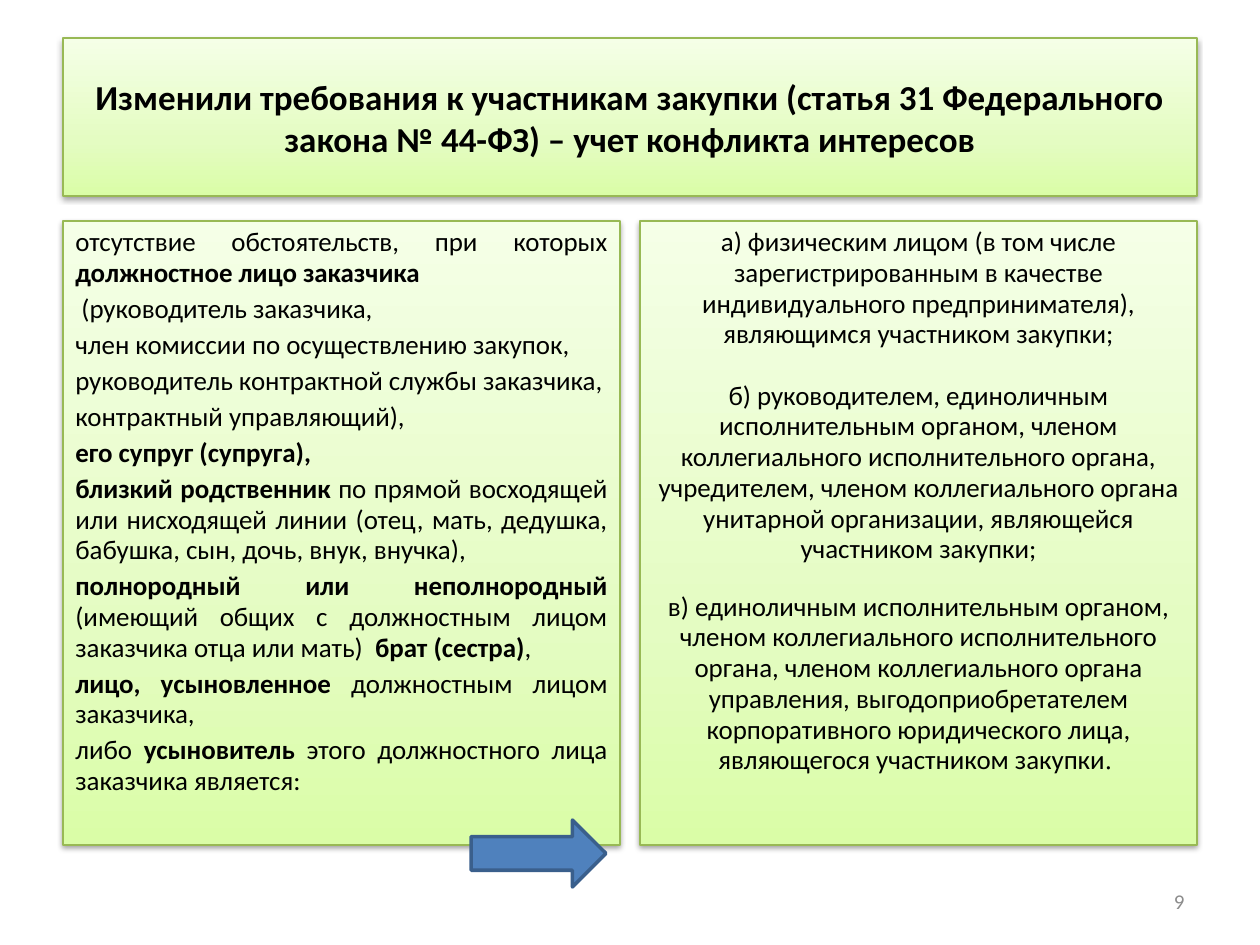
from copy import deepcopy

from lxml import etree
from pptx import Presentation
from pptx.dml.color import RGBColor
from pptx.enum.shapes import MSO_SHAPE
from pptx.enum.text import MSO_ANCHOR, PP_ALIGN
from pptx.oxml.ns import qn
from pptx.util import Emu, Pt

RECTANGLE, RIGHT_ARROW = MSO_SHAPE.RECTANGLE, MSO_SHAPE.RIGHT_ARROW
TOP, MIDDLE = MSO_ANCHOR.TOP, MSO_ANCHOR.MIDDLE
CENTER, JUSTIFY, RIGHT = PP_ALIGN.CENTER, PP_ALIGN.JUSTIFY, PP_ALIGN.RIGHT

BLACK = RGBColor(0x00, 0x00, 0x00)
GRAY = RGBColor(0x8C, 0x8C, 0x8C)
GREEN_LINE = RGBColor(0x98, 0xB9, 0x55)
BLUE = RGBColor(0x4F, 0x81, 0xBD)
DARK_BLUE = RGBColor(0x3A, 0x5F, 0x8C)
GREEN_STOPS = [
    (0, RGBColor(0xDA, 0xFD, 0xA7)),
    (0.35, RGBColor(0xE4, 0xFC, 0xC2)),
    (1, RGBColor(0xF5, 0xFF, 0xE7)),
]

EMU_PER_INCH = 914400
PX_PER_INCH = 126
MARGIN = 63
COLUMN_WIDTH = 557

HEADING = ("Изменили требования к участникам закупки (статья 31 Федерального "
           "закона № 44-ФЗ) – учет конфликта интересов")
OFFICIALS = [
    "отсутствие обстоятельств, при которых *должностное лицо заказчика*",
    " (руководитель заказчика, ",
    "член комиссии по осуществлению закупок,",
    "руководитель контрактной службы заказчика,",
    "контрактный управляющий),",
    "*его супруг (супруга), *",
    "*близкий родственник *по прямой восходящей или нисходящей линии "
    "(отец, мать, дедушка, бабушка, сын, дочь, внук, внучка), ",
    "*полнородный или неполнородный *(имеющий общих с должностным лицом "
    "заказчика отца или мать)  *брат (сестра)*, ",
    "*лицо, усыновленное *должностным лицом заказчика, ",
    "либо *усыновитель* этого должностного лица заказчика является:",
]
PARTICIPANTS = [
    ("а) физическим лицом (в том числе зарегистрированным в качестве "
     "индивидуального предпринимателя), являющимся участником закупки;", 0),
    ("б) руководителем, единоличным исполнительным органом, членом "
     "коллегиального исполнительного органа, учредителем, членом "
     "коллегиального органа унитарной организации, являющейся участником "
     "закупки;", 17.5),
    ("в) единоличным исполнительным органом, членом коллегиального "
     "исполнительного органа, членом коллегиального органа управления, "
     "выгодоприобретателем корпоративного юридического лица, являющегося "
     "участником закупки", 15.3),
]

BODY_FONT = {"name": "Calibri", "size": Pt(15.4)}
BODY_LINES = {"line_spacing": 0.95}


def px(length):
    return Emu(round(length * EMU_PER_INCH / PX_PER_INCH))


def apply_format(target, values):
    for key, value in values.items():
        setattr(target, key, value)


def add_run(paragraph, text, font, color=BLACK):
    run = paragraph.add_run()
    run.text = text
    apply_format(run.font, font)
    run.font.color.rgb = color


def add_paragraph(frame, text, layout, font, color=BLACK):
    first = frame.paragraphs[0]
    paragraph = frame.add_paragraph() if first.runs else first
    apply_format(paragraph, layout)
    for index, part in enumerate(text.split("*")):
        if part:
            add_run(paragraph, part, {"bold": index % 2 == 1, **font}, color)
    return paragraph


def add_soft_shadow(shape):
    shape.shadow.inherit = False
    effects = shape._element.spPr.find(qn("a:effectLst"))
    shadow = etree.SubElement(effects, qn("a:outerShdw"), blurRad=str(Pt(3.1)),
                              dist=str(Pt(1.6)), dir="5400000", rotWithShape="0")
    color = etree.SubElement(shadow, qn("a:srgbClr"), val="000000")
    etree.SubElement(color, qn("a:alpha"), val="38000")


def add_green_panel(slide, box, anchor):
    panel = slide.shapes.add_shape(RECTANGLE, *map(px, box))
    panel.fill.gradient()
    panel.fill.gradient_angle = 90
    stop_list = panel._element.spPr.find(qn("a:gradFill")).find(qn("a:gsLst"))
    stop_list.append(deepcopy(stop_list[0]))
    for stop, (position, color) in zip(panel.fill.gradient_stops, GREEN_STOPS):
        stop.position = position
        stop.color.rgb = color
    panel.line.color.rgb = GREEN_LINE
    panel.line.width = Pt(0.75)
    add_soft_shadow(panel)
    apply_format(panel.text_frame, {"word_wrap": True, "vertical_anchor": anchor})
    return panel.text_frame


def add_heading(slide, box):
    frame = add_green_panel(slide, box, MIDDLE)
    add_paragraph(frame, HEADING, {"alignment": CENTER},
                  {"name": "Calibri", "size": Pt(20), "bold": True})


def add_officials(slide, box):
    frame = add_green_panel(slide, box, TOP)
    layout = {"alignment": JUSTIFY, "space_before": Pt(3), **BODY_LINES}
    for text in OFFICIALS:
        add_paragraph(frame, text, layout, BODY_FONT)


def add_participants(slide, box):
    frame = add_green_panel(slide, box, TOP)
    for text, gap in PARTICIPANTS:
        layout = {"alignment": CENTER, "space_before": Pt(gap), **BODY_LINES}
        closing = add_paragraph(frame, text, layout, BODY_FONT)
    add_run(closing, ". ", {**BODY_FONT, "name": "Times New Roman"})


def add_page_number(slide, box):
    frame = slide.shapes.add_textbox(*map(px, box)).text_frame
    apply_format(frame, {"word_wrap": True, "vertical_anchor": MIDDLE})
    add_paragraph(frame, "9", {"alignment": RIGHT},
                  {"name": "Calibri", "size": Pt(12)}, GRAY)


def add_arrow(slide, box):
    arrow = slide.shapes.add_shape(RIGHT_ARROW, *map(px, box))
    arrow.shadow.inherit = False
    arrow.fill.solid()
    arrow.fill.fore_color.rgb = BLUE
    arrow.line.color.rgb = DARK_BLUE
    arrow.line.width = Pt(2)


def main():
    deck = Presentation()
    deck.slide_width, deck.slide_height = px(1260), px(945)
    slide = deck.slides.add_slide(deck.slide_layouts[6])
    right_edge = 1260 - MARGIN
    add_heading(slide, (MARGIN, 38, right_edge - MARGIN, 158))
    add_officials(slide, (MARGIN, 221, COLUMN_WIDTH, 624))
    add_participants(slide, (right_edge - COLUMN_WIDTH, 221, COLUMN_WIDTH, 624))
    add_page_number(slide, (right_edge - 294, 876, 294, 50))
    add_arrow(slide, (471, 820, 135, 67))
    deck.save("out.pptx")


if __name__ == "__main__":
    main()
